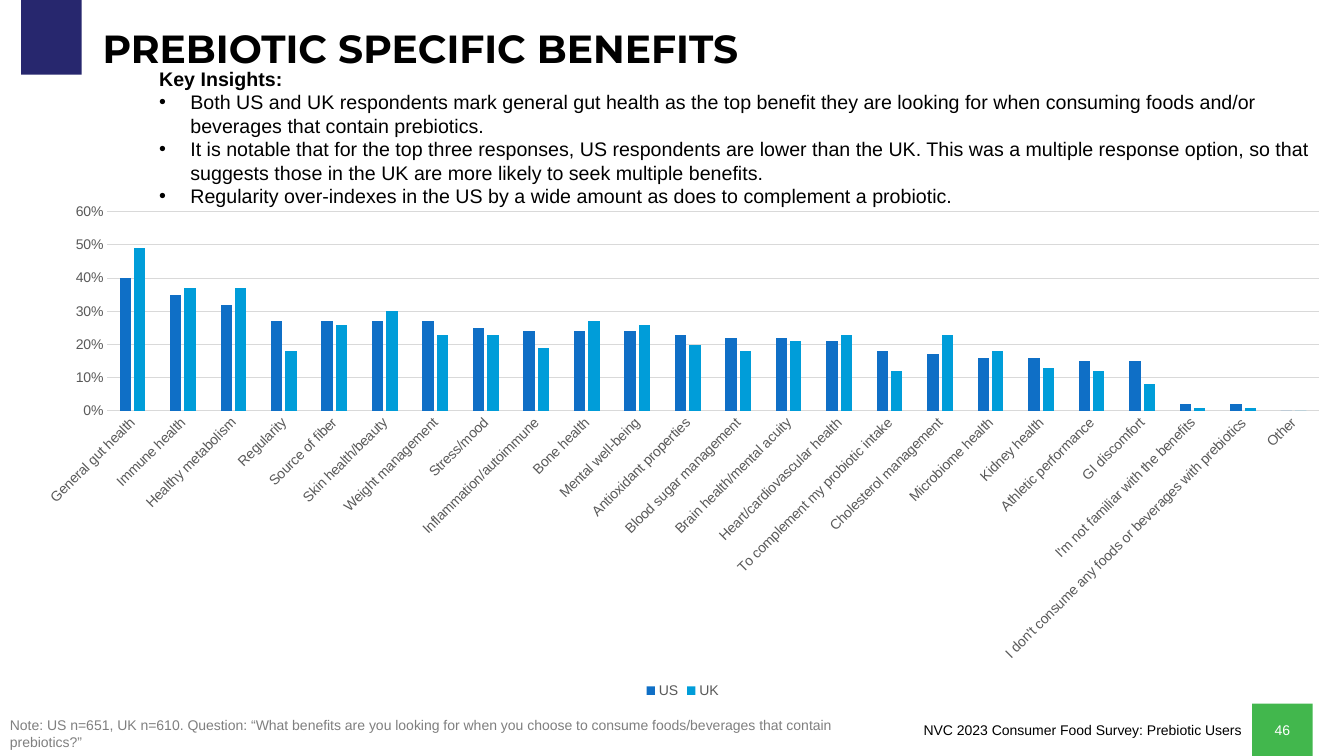
"""Build the slide on the specific benefits of prebiotics."""
import lxml.etree
import pptx
import pptx.chart.data
import pptx.dml.color
import pptx.enum.chart
import pptx.enum.shapes
import pptx.enum.text
import pptx.oxml
import pptx.oxml.ns
import pptx.util

Inches = pptx.util.Inches
Pt = pptx.util.Pt
RGBColor = pptx.dml.color.RGBColor
Align = pptx.enum.text.PP_ALIGN
Anchor = pptx.enum.text.MSO_ANCHOR
qn = pptx.oxml.ns.qn

NAVY = RGBColor(0x27, 0x27, 0x6E)
GREEN = RGBColor(0x42, 0xB7, 0x4D)
BLUE = RGBColor(0x0F, 0x6F, 0xC6)
CYAN = RGBColor(0x00, 0x9D, 0xD9)
BLACK = RGBColor(0, 0, 0)
WHITE = RGBColor(255, 255, 255)
SLATE = RGBColor(0x59, 0x59, 0x59)
GRAY = RGBColor(0x7F, 0x7F, 0x7F)
PALE = RGBColor(0xD9, 0xD9, 0xD9)

POINTS = [
    "Both US and UK respondents mark general gut health as the top benefit they are looking for "
    "when consuming foods and/or beverages that contain prebiotics.",
    "It is notable that for the top three responses, US respondents are lower than the UK. "
    "This was a multiple response option, so that suggests those in the UK are more likely "
    "to seek multiple benefits.",
    "Regularity over-indexes in the US by a wide amount as does to complement a probiotic.",
]
NOTE = ("Note: US n=651, UK n=610. Question: “What benefits are you looking for when you choose "
        "to consume foods/beverages that contain prebiotics?”")
SERIES = [("US", BLUE), ("UK", CYAN)]
ROWS = [
    ("General gut health", 0.4, 0.49),
    ("Immune health", 0.35, 0.37),
    ("Healthy metabolism", 0.32, 0.37),
    ("Regularity", 0.27, 0.18),
    ("Source of fiber", 0.27, 0.26),
    ("Skin health/beauty", 0.27, 0.3),
    ("Weight management", 0.27, 0.23),
    ("Stress/mood", 0.25, 0.23),
    ("Inflammation/autoimmune", 0.24, 0.19),
    ("Bone health", 0.24, 0.27),
    ("Mental well-being", 0.24, 0.26),
    ("Antioxidant properties", 0.23, 0.2),
    ("Blood sugar management", 0.22, 0.18),
    ("Brain health/mental acuity", 0.22, 0.21),
    ("Heart/cardiovascular health", 0.21, 0.23),
    ("To complement my probiotic intake", 0.18, 0.12),
    ("Cholesterol management", 0.17, 0.23),
    ("Microbiome health", 0.16, 0.18),
    ("Kidney health", 0.16, 0.13),
    ("Athletic performance", 0.15, 0.12),
    ("GI discomfort", 0.15, 0.08),
    ("I'm not familiar with the benefits", 0.02, 0.01),
    ("I don't consume any foods or beverages with prebiotics", 0.02, 0.01),
    ("Other", 0, 0),
]


class Page:
    """Hold the style and the current slide."""

    def __init__(self, slide, face="Arial"):
        self.slide = slide
        self.face = face

    def style(self, font, size, color, bold=False, face=None):
        font.name = face or self.face
        font.size = Pt(size)
        font.bold = bold
        font.color.rgb = color

    def block(self, box, fill):
        shape = self.slide.shapes.add_shape(
            pptx.enum.shapes.MSO_SHAPE.RECTANGLE, *map(Inches, box))
        shape.shadow.inherit = False
        shape.fill.solid()
        shape.fill.fore_color.rgb = fill
        shape.line.fill.background()
        return shape

    def label(self, frame, text, size, color, align=Align.LEFT, anchor=Anchor.TOP, **look):
        frame.word_wrap = True
        frame.vertical_anchor = anchor
        frame.text = text
        para = frame.paragraphs[0]
        para.alignment = align
        self.style(para.runs[0].font, size, color, **look)

    def text(self, box, text, size, color, **look):
        frame = self.slide.shapes.add_textbox(*map(Inches, box)).text_frame
        self.label(frame, text, size, color, **look)
        return frame

    def bullet(self, frame, text, size, color):
        para = frame.add_paragraph()
        props = para._p.get_or_add_pPr()
        props.set("marL", str(Inches(0.31)))
        props.set("indent", str(-Inches(0.31)))
        lxml.etree.SubElement(props, qn("a:buFont")).set("typeface", self.face)
        lxml.etree.SubElement(props, qn("a:buChar")).set("char", "•")
        para.text = text
        self.style(para.runs[0].font, size, color)

    def chart(self, box, rows, series):
        data = pptx.chart.data.CategoryChartData(number_format="0%")
        names, *columns = zip(*rows)
        data.categories = names
        for (name, _), values in zip(series, columns):
            data.add_series(name, values)
        chart = self.slide.shapes.add_chart(
            pptx.enum.chart.XL_CHART_TYPE.COLUMN_CLUSTERED, *map(Inches, box), data).chart
        chart.has_title = False
        self.style(chart.font, 10, BLACK)
        plot = chart.plots[0]
        plot.vary_by_categories = False
        plot.gap_width = 219
        plot.overlap = -27
        for bars, (_, color) in zip(plot.series, series):
            bars.format.fill.solid()
            bars.format.fill.fore_color.rgb = color
        chart.has_legend = True
        chart.legend.position = pptx.enum.chart.XL_LEGEND_POSITION.BOTTOM
        chart.legend.include_in_layout = False
        self.style(chart.legend.font, 10, SLATE)
        self.axes(chart)
        self.layout(chart, x=0.065, y=0.034, w=0.916, h=0.392)

    def axes(self, chart):
        cat, val = chart.category_axis, chart.value_axis
        for axis in (cat, val):
            axis.major_tick_mark = pptx.enum.chart.XL_TICK_MARK.NONE
            axis.minor_tick_mark = pptx.enum.chart.XL_TICK_MARK.NONE
            self.style(axis.tick_labels.font, 10, SLATE)
        val.has_major_gridlines = True
        for line in (cat.format.line, val.major_gridlines.format.line):
            line.color.rgb = PALE
            line.width = Pt(0.75)
        val.format.line.fill.background()
        val.minimum_scale, val.maximum_scale, val.major_unit = 0, 0.6, 0.1
        val.tick_labels.number_format = "0%"
        val.tick_labels.number_format_is_linked = False
        body = cat._element.find(qn("c:txPr")).find(qn("a:bodyPr"))
        body.set("rot", "-2700000")
        body.set("vert", "horz")

    def layout(self, chart, **sizes):
        area = chart._chartSpace.find(".//" + qn("c:plotArea"))
        for old in area.findall(qn("c:layout")):
            area.remove(old)
        layout = lxml.etree.SubElement(area, qn("c:layout"))
        area.insert(0, layout)
        manual = lxml.etree.SubElement(layout, qn("c:manualLayout"))
        modes = {"layoutTarget": "inner", "xMode": "edge", "yMode": "edge"}
        for tag, value in {**modes, **sizes}.items():
            lxml.etree.SubElement(manual, qn("c:" + tag)).set("val", str(value))


def main():
    deck = pptx.Presentation()
    deck.slide_width, deck.slide_height = Inches(13.33), Inches(7.5)
    page = Page(deck.slides.add_slide(deck.slide_layouts[6]))
    page.block((0.21, -0.05, 0.6, 0.79), NAVY)
    page.text((7.92, 7.11, 4.49, 0.27), "NVC 2023 Consumer Food Survey: Prebiotic Users",
              10, BLACK, align=Align.RIGHT)
    badge = page.block((12.42, 6.98, 0.6, 0.52), GREEN)
    page.label(badge.text_frame, "46", 10, WHITE, align=Align.CENTER, anchor=Anchor.MIDDLE)
    title = page.text((0.92, 0.25, 11.5, 0.5), "PREBIOTIC SPECIFIC BENEFITS", 28, BLACK,
                      anchor=Anchor.MIDDLE, bold=True, face="Montserrat")
    title.paragraphs[0].line_spacing = 0.9
    frame = page.text((1.48, 0.61, 11.72, 2.22), "Key Insights:", 14, BLACK, bold=True)
    for point in POINTS:
        page.bullet(frame, point, 14, BLACK)
    page.text((0, 7.06, 9, 0.44), NOTE, 10, GRAY)
    page.chart((0.21, 1.93, 13.12, 5.04), ROWS, SERIES)
    deck.save("out.pptx")


if __name__ == "__main__":
    main()
